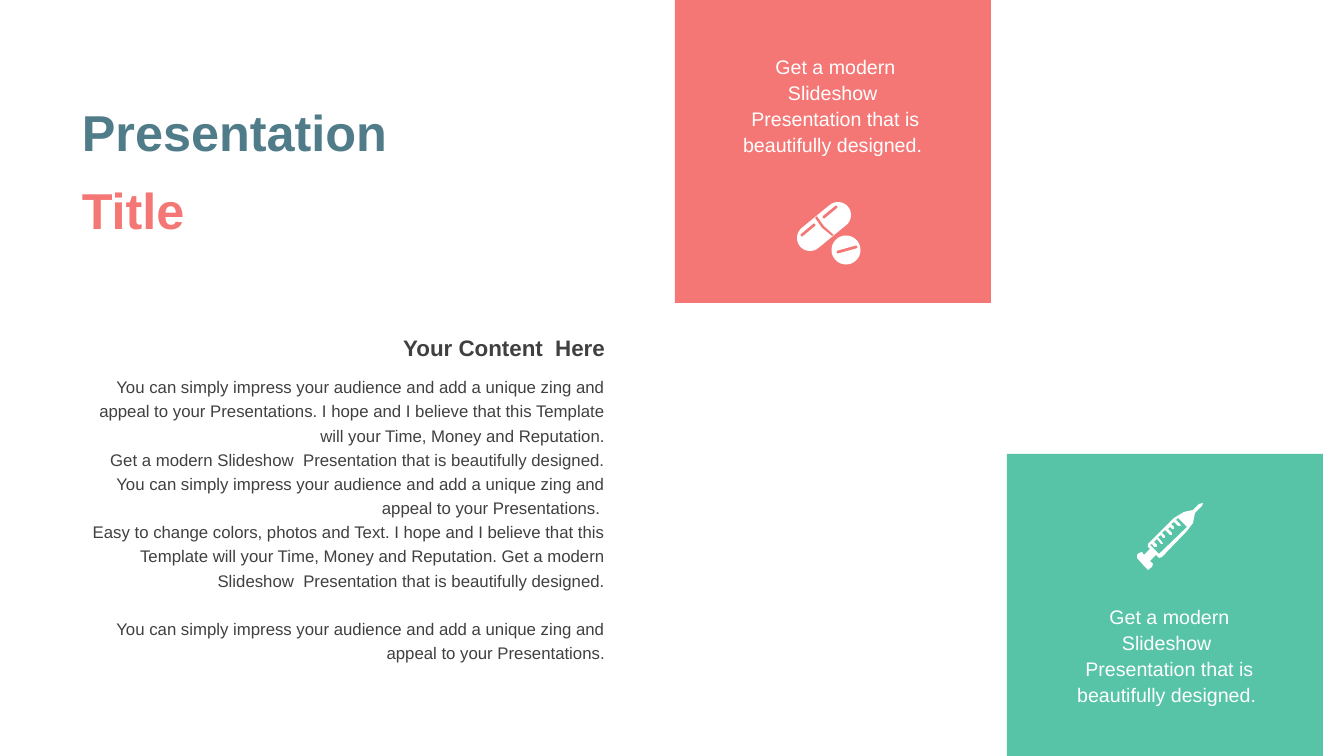
"""Build a title slide with two coloured medical cards."""
from math import atan2, cos, pi, sin

from pptx import Presentation
from pptx.dml.color import RGBColor
from pptx.enum.shapes import MSO_SHAPE
from pptx.enum.text import MSO_ANCHOR, PP_ALIGN
from pptx.util import Pt

PX = 914400 / 100.8
COLORS = {"coral": "F47775", "green": "57C3A7", "slate": "507C89",
          "dark": "404040", "white": "FFFFFF"}


def add_text(box, paragraphs, size, align, spacing=1.0, bold=False, before=(), anchor=MSO_ANCHOR.TOP):
    tf = s.shapes.add_textbox(*[round(v * PX) for v in box]).text_frame
    tf.word_wrap = True
    tf.vertical_anchor = anchor
    for i, (text, color) in enumerate(paragraphs):
        p = tf.paragraphs[0] if i == 0 else tf.add_paragraph()
        p.alignment = align
        p.line_spacing = spacing
        if i < len(before):
            p.space_before = Pt(before[i])
        r = p.add_run()
        r.text = text
        r.font.name = "Arial"
        r.font.size = Pt(size)
        r.font.bold = bold
        r.font.color.rgb = RGBColor.from_string(COLORS[color])


def rounded_bar(x1, y1, x2, y2, width):
    angle = atan2(y2 - y1, x2 - x1)
    points = []
    for x, y, start in ((x1, y1, angle + pi / 2), (x2, y2, angle - pi / 2)):
        for step in range(17):
            a = start + pi * step / 16
            points.append((x + width / 2 * cos(a), y + width / 2 * sin(a)))
    return points


prs = Presentation()
prs.slide_width, prs.slide_height = round(1344 * PX), round(756 * PX)
s = prs.slides.add_slide(prs.slide_layouts[6])

cards = [("green", 1007, 454, 302, 1066, 598), ("coral", 675, 0, 303, 732, 48)]
for color, left, top, height, text_left, text_top in cards:
    sp = s.shapes.add_shape(MSO_SHAPE.RECTANGLE, *[round(v * PX) for v in (left, top, 316, height)])
    sp.shadow.inherit = False
    sp.fill.solid()
    sp.fill.fore_color.rgb = RGBColor.from_string(COLORS[color])
    sp.line.fill.background()

add_text((72, 60, 446, 215), [("Presentation", "slate"), ("Title", "coral")], 36,
         PP_ALIGN.LEFT, 1.1, True, (9, 8), MSO_ANCHOR.MIDDLE)

body = [
    "You can simply impress your audience and add a unique zing and appeal to your Presentations. "
    "I hope and I believe that this Template will your Time, Money and Reputation.",
    "Get a modern Slideshow  Presentation that is beautifully designed. You can simply impress "
    "your audience and add a unique zing and appeal to your Presentations. ",
    "Easy to change colors, photos and Text. I hope and I believe that this Template will your Time, "
    "Money and Reputation. Get a modern Slideshow  Presentation that is beautifully designed.",
    "You can simply impress your audience and add a unique zing and appeal to your Presentations.",
]
add_text((72, 368, 543, 303), [(text, "dark") for text in body], 12,
         PP_ALIGN.RIGHT, 1.2, before=(0, 0, 0, 17))
add_text((72, 329, 543, 37), [("Your Content  Here", "dark")], 16, PP_ALIGN.RIGHT, bold=True)

card_text = "Get a modern Slideshow  Presentation that is beautifully designed. "
for color, left, top, height, text_left, text_top in cards:
    add_text((text_left, text_top, 207, 115), [(card_text, "white")], 14, PP_ALIGN.CENTER, 1.1)

pills = [
    rounded_bar(810, 238, 838, 215, 26),
    [(815, 218), (822, 228), (832, 236), (834, 235), (824, 226), (817, 216)],
    rounded_bar(814, 225, 802, 235, 3),
    rounded_bar(836, 207, 824, 217, 3),
    rounded_bar(846, 250, 846, 250, 29),
    rounded_bar(856, 247, 838, 252, 3),
]
syringe = [
    [(1156, 555), (1150, 561), (1153, 564), (1152, 567), (1148, 570), (1145, 567), (1137, 558),
     (1137, 555), (1139, 553), (1142, 552), (1144, 555), (1150, 549), (1148, 547), (1148, 544),
     (1174, 518), (1184, 512), (1193, 510), (1194, 509), (1199, 504), (1203, 503), (1202, 506),
     (1195, 513), (1193, 523), (1187, 531), (1162, 557), (1159, 558)],
    [(1159, 554), (1187, 527), (1178, 518), (1176, 520), (1180, 524), (1181, 526), (1178, 526),
     (1174, 522), (1171, 524), (1174, 527), (1174, 529), (1172, 529), (1170, 527), (1168, 529),
     (1172, 533), (1172, 535), (1170, 535), (1169, 534), (1165, 530), (1162, 533), (1165, 536),
     (1165, 538), (1163, 538), (1161, 535), (1158, 537), (1162, 542), (1163, 544), (1161, 544),
     (1157, 539), (1154, 542), (1157, 545), (1157, 547), (1154, 547), (1152, 544), (1150, 545),
     (1151, 546)],
]
for contours in (pills, syringe):
    scaled = [[(round(x * PX), round(y * PX)) for x, y in points] for points in contours]
    icon = s.shapes.build_freeform(*scaled[0][0])
    for i, points in enumerate(scaled):
        if i:
            icon.move_to(*points[0])
        icon.add_line_segments(points[1:], close=True)
    sp = icon.convert_to_shape()
    sp.shadow.inherit = False
    sp.fill.solid()
    sp.fill.fore_color.rgb = RGBColor.from_string(COLORS["white"])
    sp.line.fill.background()

prs.save("out.pptx")
